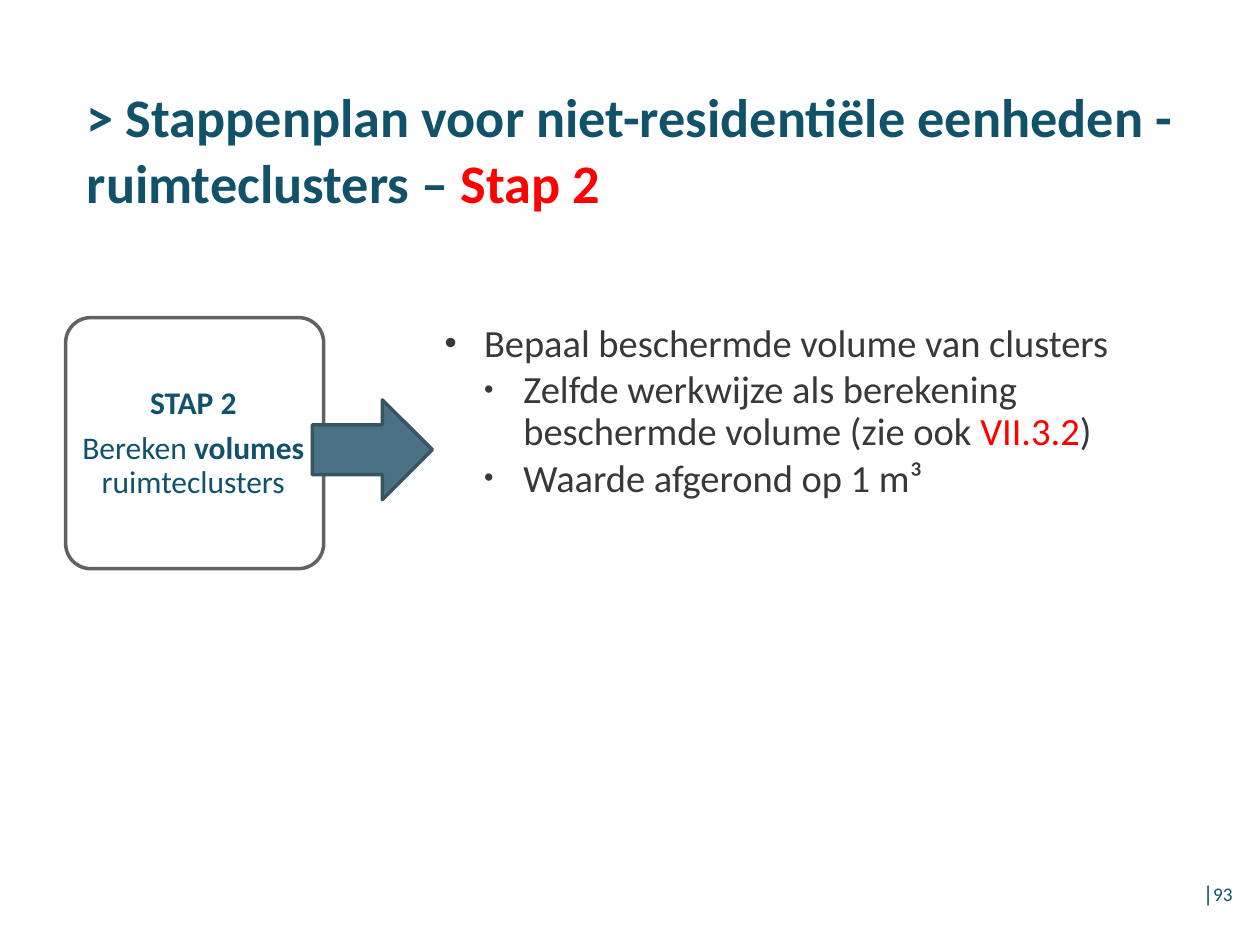
from lxml import etree
from pptx import Presentation
from pptx import util as u
from pptx.dml.color import RGBColor
from pptx.enum import shapes, text
from pptx.oxml.ns import qn

COLOURS = {
    "teal": "105269",
    "red": "FF0000",
    "ink": "38373A",
    "white": "FFFFFF",
    "grey": "616264",
    "steel": "4B7284",
    "dark_steel": "375462",
}


class SlideBuilder:
    font = "Calibri"

    def __init__(self, slide):
        self.slide = slide

    def colour(self, name):
        return RGBColor.from_string(COLOURS[name])

    def shape(self, kind, box, fill, line, width=2):
        shape = self.slide.shapes.add_shape(kind, *map(u.Pt, box))
        shape.shadow.inherit = False
        shape.fill.solid()
        shape.fill.fore_color.rgb = self.colour(fill)
        shape.line.color.rgb = self.colour(line)
        shape.line.width = u.Pt(width)
        return shape

    def frame(self, box, anchor=text.MSO_ANCHOR.TOP, inset=None):
        frame = self.slide.shapes.add_textbox(*map(u.Pt, box)).text_frame
        frame.word_wrap = True
        frame.vertical_anchor = anchor
        if inset is not None:
            frame.margin_left = frame.margin_right = u.Pt(inset)
            frame.margin_top = frame.margin_bottom = u.Pt(inset)
        return frame

    def paragraph(self, frame, runs, size, align=None, spacing=None, before=None, after=None):
        first = not frame.paragraphs[0].runs
        paragraph = frame.paragraphs[0] if first else frame.add_paragraph()
        paragraph.alignment = align
        paragraph.line_spacing = spacing
        if before is not None and not first:
            paragraph.space_before = u.Pt(before)
        if after is not None:
            paragraph.space_after = u.Pt(after)
        for words, colour, bold in runs:
            run = paragraph.add_run()
            run.text = words
            run.font.name = self.font
            run.font.size = u.Pt(size)
            run.font.bold = bold
            run.font.color.rgb = self.colour(colour)
        return paragraph

    def bullet(self, frame, runs, level, percent, indent=22.5):
        paragraph = self.paragraph(frame, runs, 22, spacing=0.9, before=3)
        paragraph.level = level
        properties = paragraph._p.get_or_add_pPr()
        properties.set("marL", str(u.Pt(indent * (level + 1))))
        properties.set("indent", str(u.Pt(-indent)))
        etree.SubElement(properties, qn("a:buSzPct"), val=str(percent * 1000))
        etree.SubElement(properties, qn("a:buFont"), typeface="Arial")
        etree.SubElement(properties, qn("a:buChar"), char="•")


def main():
    deck = Presentation()
    deck.slide_width, deck.slide_height = u.Pt(720), u.Pt(540)
    builder = SlideBuilder(deck.slides.add_slide(deck.slide_layouts[6]))

    explanation = builder.frame((247, 181.5, 436.5, 335))
    points = [
        (0, 90, [("Bepaal beschermde volume van clusters", "ink", False)]),
        (1, 70, [
            ("Zelfde werkwijze als berekening beschermde volume (zie ook ", "ink", False),
            ("VII.3.2", "red", False),
            (")", "ink", False),
        ]),
        (1, 70, [("Waarde afgerond op 1 m³", "ink", False)]),
    ]
    for level, percent, runs in points:
        builder.bullet(explanation, runs, level, percent)

    page_number = builder.frame((543.5, 500.5, 168, 29))
    builder.paragraph(page_number, [("│", "teal", True), ("93", "teal", False)], 11,
                      align=text.PP_ALIGN.RIGHT)

    title = builder.frame((42.5, 43, 657.5, 85))
    builder.paragraph(title, [
        ("> Stappenplan voor niet-residentiële eenheden - ruimteclusters – ", "teal", True),
        ("Stap 2", "red", True),
    ], 31, spacing=u.Pt(38))

    step = builder.shape(shapes.MSO_SHAPE.ROUNDED_RECTANGLE, (37.5, 181.5, 147.5, 143.5),
                         "white", "grey")
    step.adjustments[0] = 0.1
    step_text = builder.frame((41, 186, 139, 135), text.MSO_ANCHOR.MIDDLE, inset=5)
    step_lines = [
        [("STAP 2", "teal", True)],
        [("Bereken", "teal", False), (" volumes ", "teal", True), ("ruimteclusters", "teal", False)],
    ]
    for runs in step_lines:
        builder.paragraph(step_text, runs, 18, align=text.PP_ALIGN.CENTER, spacing=0.9, after=6.3)

    builder.shape(shapes.MSO_SHAPE.RIGHT_ARROW, (178.5, 228.5, 68.5, 57), "steel", "dark_steel")

    deck.save("out.pptx")


if __name__ == "__main__":
    main()
